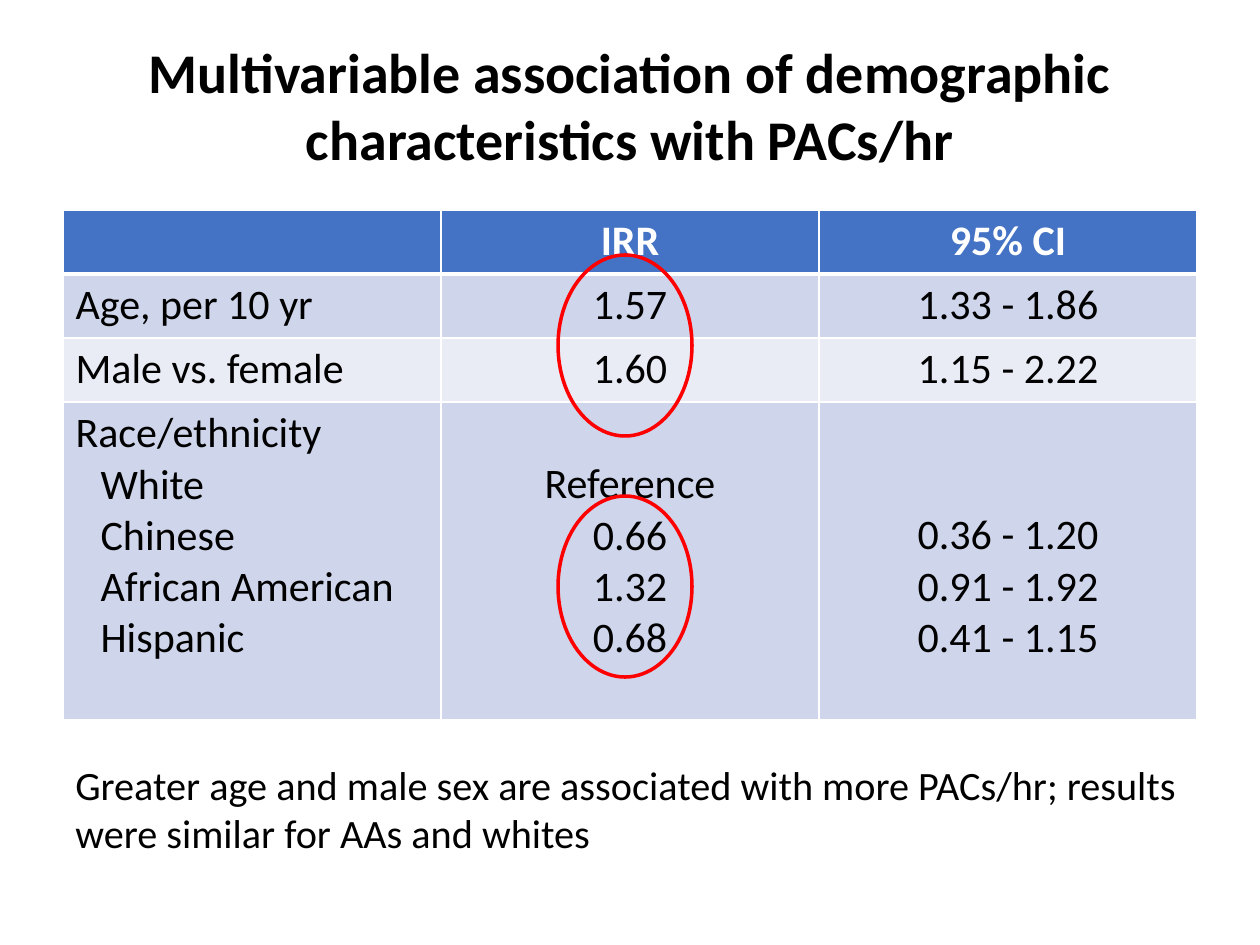
"""Build a slide with a table of demographic associations and two highlights."""
from lxml import etree
from pptx import Presentation
from pptx.dml.color import RGBColor
from pptx.enum.shapes import MSO_SHAPE
from pptx.enum.text import MSO_ANCHOR, PP_ALIGN
from pptx.oxml.ns import qn
from pptx.util import Emu, Pt

OVAL = MSO_SHAPE.OVAL
TOP, MIDDLE = MSO_ANCHOR.TOP, MSO_ANCHOR.MIDDLE
LEFT, CENTER = PP_ALIGN.LEFT, PP_ALIGN.CENTER
EMU_PER_INCH, PX_PER_INCH = 914400, 126
LINE_HEIGHT, CELL_MARGIN, INDENT = 51, 6, 25
COLORS = {
    "text": "000000", "white": "FFFFFF", "header": "4472C4",
    "band": "CFD5EA", "light": "E9EBF5", "highlight": "FF0000",
}
ROW_HEIGHTS = [64, 64, 64, 318]
ROW_FILLS = ["header", "band", "light", "band"]
ROWS = [
    [[], ["IRR"], ["95% CI"]],
    [["Age, per 10 yr"], ["1.57"], ["1.33 - 1.86"]],
    [["Male vs. female"], ["1.60"], ["1.15 - 2.22"]],
    [
        ["Race/ethnicity", "White", "Chinese", "African American", "Hispanic"],
        ["Reference", "0.66", "1.32", "0.68"],
        ["0.36 - 1.20", "0.91 - 1.92", "0.41 - 1.15"],
    ],
]


def px(length):
    """Turn pixels into EMU."""
    return Emu(round(length * EMU_PER_INCH / PX_PER_INCH))


def color(name):
    """Look up a named colour."""
    return RGBColor.from_string(COLORS[name])


def write_paragraph(paragraph, text, size, align=LEFT, bold=False, ink="text"):
    """Write formatted text into a paragraph."""
    paragraph.text = text
    paragraph.alignment = align
    formats = {"name": "Calibri", "size": Pt(size), "bold": bold}
    for name, value in formats.items():
        setattr(paragraph.font, name, value)
    paragraph.font.color.rgb = color(ink)


def add_text(slide, box, text, size, anchor=TOP, **formats):
    """Add a wrapped text box."""
    frame = slide.shapes.add_textbox(*map(px, box)).text_frame
    frame.word_wrap = True
    frame.vertical_anchor = anchor
    write_paragraph(frame.paragraphs[0], text, size, **formats)


def set_borders(cell, widths):
    """Draw white borders with the given widths in points."""
    properties = cell._tc.get_or_add_tcPr()
    for side, width in widths.items():
        line = etree.SubElement(properties, qn(f"a:ln{side}"), w=str(Pt(width)))
        fill = etree.SubElement(line, qn("a:solidFill"))
        etree.SubElement(fill, qn("a:srgbClr"), val=COLORS["white"])


def fill_cell(cell, lines, row, column, line_count):
    """Write one table cell, lowering short lists to line up with the labels."""
    is_header = row == 0
    set_borders(cell, {"L": 1, "R": 1, "T": 3 if row == 1 else 1,
                       "B": 3 if is_header else 1})
    cell.fill.solid()
    cell.fill.fore_color.rgb = color(ROW_FILLS[row])
    if not lines:
        return
    cell.margin_top = px(CELL_MARGIN + LINE_HEIGHT * (line_count - len(lines)))
    frame = cell.text_frame
    for index, text in enumerate(lines):
        paragraph = frame.add_paragraph() if index else frame.paragraphs[0]
        write_paragraph(paragraph, text, 24, CENTER if column else LEFT,
                        is_header, "white" if is_header else "text")
        if index and column == 0:
            paragraph._p.get_or_add_pPr().set("marL", str(px(INDENT)))


def add_association_table(slide):
    """Add the table of rate ratios and confidence intervals."""
    box = (63, 210, 1134, sum(ROW_HEIGHTS))
    table = slide.shapes.add_table(len(ROWS), len(ROWS[0]), *map(px, box)).table
    for row, cells in enumerate(ROWS):
        table.rows[row].height = px(ROW_HEIGHTS[row])
        line_count = max(map(len, cells))
        for column, lines in enumerate(cells):
            fill_cell(table.cell(row, column), lines, row, column, line_count)


def add_highlight(slide, top):
    """Add a red ellipse around rate ratios."""
    shape = slide.shapes.add_shape(OVAL, *map(px, (558, top, 134, 181)))
    shape.shadow.inherit = False
    shape.fill.background()
    shape.line.color.rgb = color("highlight")
    shape.line.width = Pt(2)


def main():
    """Build and save the presentation."""
    presentation = Presentation()
    presentation.slide_width, presentation.slide_height = px(1260), px(945)
    slide = presentation.slides.add_slide(presentation.slide_layouts[6])
    add_text(slide, (63, 42, 1134, 125),
             "Multivariable association of demographic characteristics with PACs/hr",
             32, MIDDLE, align=CENTER, bold=True)
    add_association_table(slide)
    add_text(slide, (63, 754, 1134, 111),
             "Greater age and male sex are associated with more PACs/hr; "
             "results were similar for AAs and whites", 23)
    for top in (496, 255):
        add_highlight(slide, top)
    presentation.save("out.pptx")


if __name__ == "__main__":
    main()
